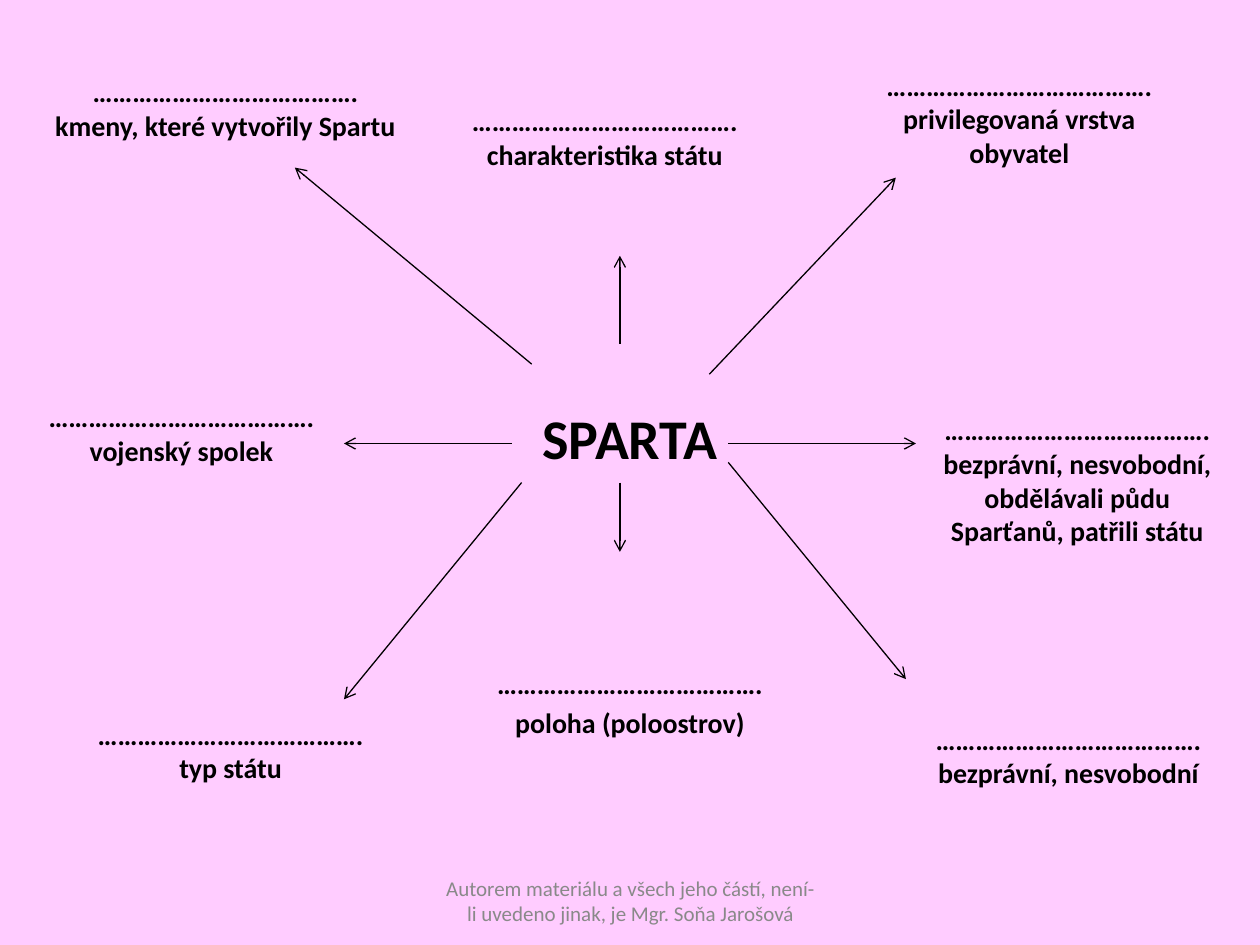
import dataclasses

import lxml.etree
import pptx
import pptx.dml.color
import pptx.enum.shapes
import pptx.enum.text
import pptx.oxml.ns
import pptx.util

Inches = pptx.util.Inches
Pt = pptx.util.Pt
Color = pptx.dml.color.RGBColor
Anchor = pptx.enum.text.MSO_ANCHOR


@dataclasses.dataclass
class Theme:
    font: str = "Calibri"
    background: Color = Color(0xFF, 0xCC, 0xFF)
    ink: Color = Color(0, 0, 0)
    muted: Color = Color(0x89, 0x89, 0x89)
    heading_size: int = 32
    label_size: int = 16
    footer_size: int = 12
    line_width: float = 0.75


class MindMap:
    """Holds the theme and the current slide."""

    def __init__(self, deck, theme):
        self.theme = theme
        self.slide = deck.slides.add_slide(deck.slide_layouts[1])
        fill = self.slide.background.fill
        fill.solid()
        fill.fore_color.rgb = theme.background

    def place(self, box, left, top, width, height, anchor=Anchor.MIDDLE):
        box.left, box.top = Inches(left), Inches(top)
        box.width, box.height = Inches(width), Inches(height)
        frame = box.text_frame
        frame.word_wrap = True
        frame.auto_size = pptx.enum.text.MSO_AUTO_SIZE.NONE
        frame.vertical_anchor = anchor
        return frame

    def style(self, para, size, color, bold=True, before=0):
        para.alignment = pptx.enum.text.PP_ALIGN.CENTER
        para.space_before = Pt(before)
        para.font.name = self.theme.font
        para.font.size = Pt(size)
        para.font.bold = bold
        para.font.color.rgb = color

    def text_box(self):
        return self.slide.shapes.add_textbox(0, 0, 0, 0)

    def label(self, text, left, top, width=2.42, box=None):
        frame = self.place(box or self.text_box(), left, top, width, 0.94)
        para = frame.paragraphs[0]
        para.text = f"{BLANK}\v{text}"
        self.style(para, self.theme.label_size, self.theme.ink)

    def title(self, text, left, top, width):
        self.label(text, left, top, width, self.slide.shapes.title)

    def body(self, rows, top, height):
        frame = self.place(self.slide.placeholders[1], 0, top, 10, height, Anchor.TOP)
        for index, (text, size, before) in enumerate(rows):
            para = frame.paragraphs[0] if index == 0 else frame.add_paragraph()
            para.text = text
            self.style(para, size, self.theme.ink, before=before)
            # No bullet and no hanging indent
            properties = para._p.get_or_add_pPr()
            properties.set("marL", "0")
            properties.set("indent", "0")
            bullet = lxml.etree.Element(pptx.oxml.ns.qn("a:buNone"))
            properties.find(pptx.oxml.ns.qn("a:defRPr")).addprevious(bullet)

    def footer(self, text):
        frame = self.place(self.text_box(), 3.42, 6.95, 3.17, 0.4)
        para = frame.paragraphs[0]
        para.text = text
        self.style(para, self.theme.footer_size, self.theme.muted, bold=False)

    def arrow(self, start, end):
        line = self.slide.shapes.add_connector(
            pptx.enum.shapes.MSO_CONNECTOR.STRAIGHT,
            *(Inches(value) for value in start + end))
        line.line.color.rgb = self.theme.ink
        line.line.width = Pt(self.theme.line_width)
        outline = line.line._get_or_add_ln()
        lxml.etree.SubElement(outline, pptx.oxml.ns.qn("a:tailEnd"), type="arrow")
        lxml.etree.SubElement(line._element.spPr, pptx.oxml.ns.qn("a:effectLst"))


# Dotted line for the pupil's answer
BLANK = "…………………………………."

ARROWS = [
    ((4.92, 3.83), (4.92, 4.38)),
    ((5.78, 3.67), (7.19, 5.39)),
    ((5.78, 3.52), (7.27, 3.52)),
    ((4.06, 3.52), (2.73, 3.52)),
    ((4.14, 3.83), (2.73, 5.55)),
    ((4.92, 2.73), (4.92, 2.03)),
    ((4.22, 2.89), (2.34, 1.33)),
    ((5.63, 2.97), (7.11, 1.41)),
]

LABELS = [
    ("charakteristika státu", 3.59, 0.62),
    ("privilegovaná vrstva obyvatel", 6.88, 0.47),
    ("bezprávní, nesvobodní, obdělávali půdu Sparťanů, patřili státu", 7.34, 3.34),
    ("bezprávní, nesvobodní", 7.27, 5.53),
    ("vojenský spolek", 0.23, 2.97),
    ("typ státu", 0.62, 5.49),
]


def main():
    deck = pptx.Presentation()
    deck.slide_width, deck.slide_height = Inches(10), Inches(7.5)
    theme = Theme()
    page = MindMap(deck, theme)

    # Central word and the label below it
    page.body([
        ("SPARTA", theme.heading_size, 0),
        (BLANK, theme.label_size, 112),
        ("poloha (poloostrov)", theme.label_size, 3.2),
    ], top=3.15, height=3.55)
    page.footer("Autorem materiálu a všech jeho částí, není-li uvedeno jinak, "
                "je Mgr. Soňa Jarošová")

    # Arrows from the centre outwards
    for start, end in ARROWS:
        page.arrow(start, end)

    # Labels around the centre
    page.title("kmeny, které vytvořily Spartu", 0.23, 0.39, 3.12)
    for text, left, top in LABELS:
        page.label(text, left, top)

    deck.save("out.pptx")


if __name__ == "__main__":
    main()
